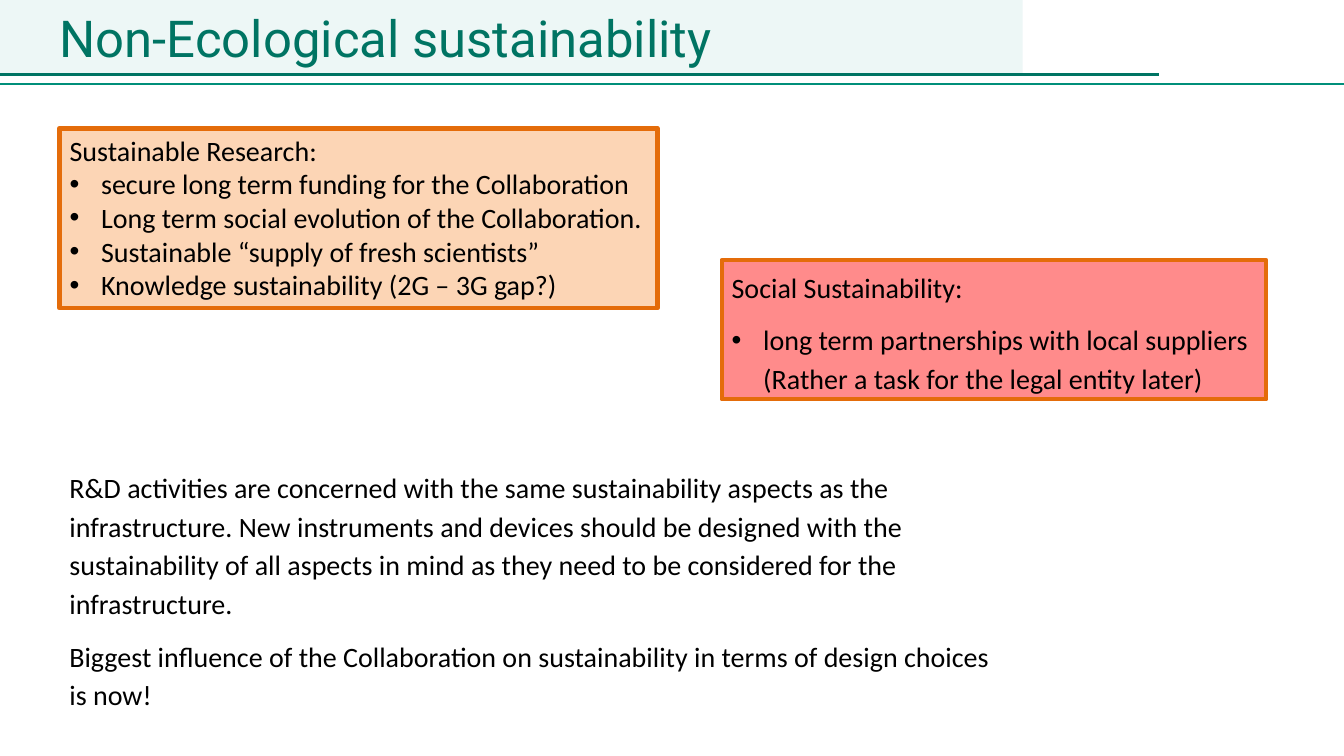
from lxml.etree import SubElement
from pptx import Presentation
from pptx.dml.color import RGBColor
from pptx.enum.shapes import MSO_CONNECTOR, MSO_SHAPE
from pptx.enum.text import MSO_ANCHOR, MSO_AUTO_SIZE, PP_ALIGN
from pptx.oxml.ns import qn
from pptx.util import Pt

BLACK = RGBColor(0x00, 0x00, 0x00)
DARK_GREEN = RGBColor(0x00, 0x74, 0x63)
GREEN = RGBColor(0x00, 0x8F, 0x7A)
PALE_GREEN = RGBColor(0xED, 0xF7, 0xF6)
ORANGE = RGBColor(0xE4, 0x6C, 0x0A)
PEACH = RGBColor(0xFC, 0xD5, 0xB5)
PINK = RGBColor(0xFF, 0x8B, 0x8B)

SLIDE_WIDTH, SLIDE_HEIGHT = 960, 540
LEFT_EDGE = 42.5
BULLET_INDENT = 22.5


def write_text(paragraph, text, *, font="Calibri", size=20, color=BLACK,
               spacing=1.0, after=0, bullet=False):
    """Put formatted text into a paragraph."""
    paragraph.text = text
    properties = paragraph._p.get_or_add_pPr()
    indent = Pt(BULLET_INDENT) if bullet else 0
    properties.set("marL", str(indent))
    properties.set("indent", str(-indent))
    paragraph.alignment = PP_ALIGN.LEFT
    paragraph.line_spacing = spacing
    paragraph.space_before = Pt(0)
    paragraph.space_after = Pt(after)
    if bullet:
        SubElement(properties, qn("a:buFont")).set("typeface", "Arial")
        SubElement(properties, qn("a:buChar")).set("char", "•")
    else:
        SubElement(properties, qn("a:buNone"))
    paragraph.font.name = font
    paragraph.font.size = Pt(size)
    paragraph.font.color.rgb = color


class SlideBuilder:
    """Hold the slide and add its elements in one style."""

    def __init__(self, presentation):
        """Add a title and content slide."""
        self.slide = presentation.slides.add_slide(presentation.slide_layouts[1])
        self.shapes = self.slide.shapes

    def band(self, width, height):
        """Add the tinted band behind the title."""
        shape = self.shapes.add_shape(MSO_SHAPE.RECTANGLE, 0, 0, Pt(width), Pt(height))
        shape.shadow.inherit = False
        self.paint(shape, PALE_GREEN)

    def rule(self, right, top, color):
        """Add a horizontal line from the left slide edge."""
        line = self.shapes.add_connector(
            MSO_CONNECTOR.STRAIGHT, 0, Pt(top), Pt(right), Pt(top))
        line.line.color.rgb = color
        line.line.width = Pt(2)
        SubElement(line._element.spPr, qn("a:effectLst"))

    def title(self, text, left, top, width, height):
        """Fill the title placeholder."""
        shape = self.place(self.shapes.title, left, top, width, height)
        frame = shape.text_frame
        frame.margin_left = frame.margin_right = 0
        frame.margin_top = frame.margin_bottom = 0
        self.fill_frame(frame, [text], anchor=MSO_ANCHOR.MIDDLE, font="Roboto",
                        size=36.3, color=DARK_GREEN, spacing=1.07)

    def list_box(self, heading, items, left, top, width, height):
        """Fill the body placeholder with a framed list."""
        shape = self.place(self.slide.placeholders[1], left, top, width, height)
        self.paint(shape, PEACH, 3.5)
        self.fill_frame(shape.text_frame, [heading], items)

    def note_box(self, heading, items, left, top, width, height):
        """Add a framed rectangle with a heading and bullets."""
        shape = self.shapes.add_shape(
            MSO_SHAPE.RECTANGLE, Pt(left), Pt(top), Pt(width), Pt(height))
        shape.shadow.inherit = False
        self.paint(shape, PINK, 3)
        self.fill_frame(shape.text_frame, [heading], items, spacing=1.15, after=10)

    def prose(self, texts, left, top, width, height):
        """Add a text box with plain paragraphs."""
        shape = self.shapes.add_textbox(Pt(left), Pt(top), Pt(width), Pt(height))
        self.fill_frame(shape.text_frame, texts, spacing=1.15, after=10)

    def place(self, shape, left, top, width, height):
        """Move a placeholder and bring it to the front."""
        shape.left, shape.top = Pt(left), Pt(top)
        shape.width, shape.height = Pt(width), Pt(height)
        self.shapes._spTree.append(shape._element)
        return shape

    def paint(self, shape, fill, border=0):
        """Set the fill and the orange border, if any."""
        shape.fill.solid()
        shape.fill.fore_color.rgb = fill
        if border:
            shape.line.color.rgb = ORANGE
            shape.line.width = Pt(border)
        else:
            shape.line.fill.background()

    def fill_frame(self, frame, texts, bullets=(), anchor=MSO_ANCHOR.TOP, **style):
        """Write plain paragraphs followed by bullets."""
        frame.word_wrap = True
        frame.auto_size = MSO_AUTO_SIZE.NONE
        frame.vertical_anchor = anchor
        for index, text in enumerate([*texts, *bullets]):
            paragraph = frame.add_paragraph() if index else frame.paragraphs[0]
            write_text(paragraph, text, bullet=index >= len(texts), **style)


def main():
    """Build the slide and save it."""
    presentation = Presentation()
    presentation.slide_width = Pt(SLIDE_WIDTH)
    presentation.slide_height = Pt(SLIDE_HEIGHT)
    builder = SlideBuilder(presentation)
    builder.band(730.5, 53)
    builder.rule(828, 53.5, DARK_GREEN)
    builder.rule(SLIDE_WIDTH, 60, GREEN)
    builder.title("Non-Ecological sustainability", LEFT_EDGE, 0, 843, 50.5)
    builder.note_box(
        "Social Sustainability:",
        ["long term partnerships with local suppliers\v"
         "(Rather a task for the legal entity later)"],
        515.5, 185.75, 389, 99.5)
    builder.list_box(
        "Sustainable Research:",
        ["secure long term funding for the Collaboration",
         "Long term social evolution of the Collaboration.",
         "Sustainable “supply of fresh scientists”",
         "Knowledge sustainability (2G – 3G gap?)"],
        LEFT_EDGE, 91.5, 427, 128.5)
    builder.prose(
        ["R&D activities are concerned with the same sustainability aspects as the "
         "infrastructure. New instruments and devices should be designed with the "
         "sustainability of all aspects in mind as they need to be considered for "
         "the infrastructure.",
         "Biggest influence of the Collaboration on sustainability in terms of "
         "design choices is now!"],
        LEFT_EDGE, 329, 683.5, 183)
    presentation.save("out.pptx")


if __name__ == "__main__":
    main()
